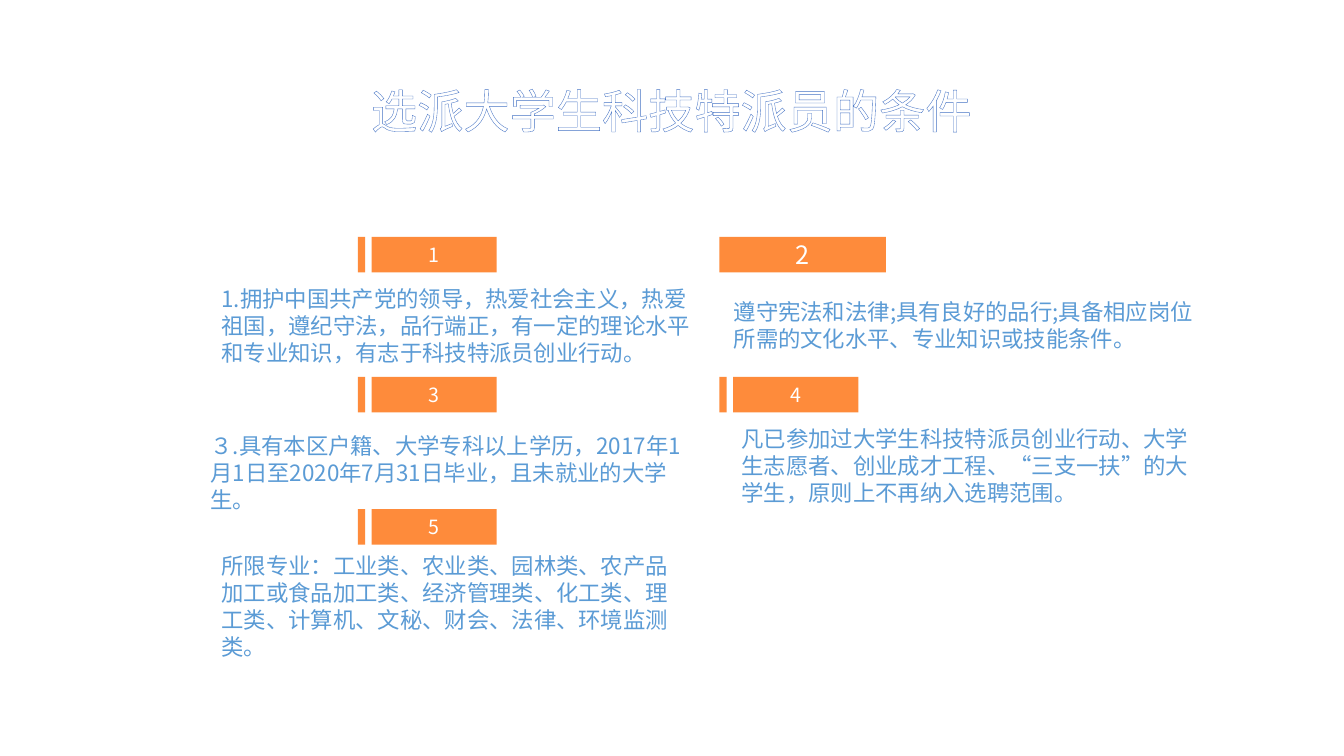
from lxml import etree
from pptx import Presentation
from pptx import util as u
from pptx.dml.color import RGBColor
from pptx.enum import shapes, text
from pptx.oxml import ns

COLORS = {"orange": "FE8B3B", "white": "FFFFFF", "blue": "5B9BD5", "outline": "4472C4"}
CJK_FONT = "Noto Sans CJK SC"
TITLE = "选派大学生科技特派员的条件"
TITLE_BOX = (169.2, 28.8, 620.64, 104.4)

COLUMNS = (255.6, 513.9)
ROWS = (169.2, 269.3, 363.6)
TAB_HEIGHT = 25.4
SLIVER_WIDTH, TAB_OFFSET, TAB_WIDTH = 5.2, 9.8, 89.4
WIDE_TAB_WIDTH = 119

# label, column, row, wide tab, text box (left, top, width, height), wording
CONDITIONS = [
    ("1", 0, 0, False, (151.2, 200.2, 355, 64.8),
     "1.拥护中国共产党的领导，热爱社会主义，热爱祖国，遵纪守法，品行端正，有一定的理论水平和专业知识，有志于科技特派员创业行动。"),
    ("2", 1, 0, True, (517, 209.5, 344.9, 45.4),
     "遵守宪法和法律;具有良好的品行;具备相应岗位所需的文化水平、专业知识或技能条件。"),
    ("3", 0, 1, False, (143.3, 305.3, 354.2, 45.4),
     "３.具有本区户籍、大学专科以上学历，2017年1月1日至2020年7月31日毕业，且未就业的大学生。"),
    ("4", 1, 1, False, (522.7, 300.2, 334.1, 64.8),
     "凡已参加过大学生科技特派员创业行动、大学生志愿者、创业成才工程、“三支一扶”的大学生，原则上不再纳入选聘范围。"),
    ("5", 0, 2, False, (151.2, 391, 346.3, 84.2),
     "所限专业：工业类、农业类、园林类、农产品加工或食品加工类、经济管理类、化工类、理工类、计算机、文秘、财会、法律、环境监测类。"),
]


def write(shape, wording, size, color, font=CJK_FONT):
    frame = shape.text_frame
    frame.text = wording
    frame.word_wrap = True
    run = frame.paragraphs[0].runs[0]
    run.font.size = u.Pt(size)
    run.font.color.rgb = RGBColor.from_string(COLORS[color])
    run.font.name = font
    east_asian = etree.Element(ns.qn("a:ea"), typeface=CJK_FONT)
    run.font._element.find(ns.qn("a:latin")).addnext(east_asian)
    return run


def center(shape):
    shape.text_frame.vertical_anchor = text.MSO_ANCHOR.MIDDLE
    shape.text_frame.paragraphs[0].alignment = text.PP_ALIGN.CENTER


def outline(run, color, width):
    """Give the run's letters an outline."""
    line = etree.Element(ns.qn("a:ln"), w=str(u.Pt(width)))
    fill = etree.SubElement(line, ns.qn("a:solidFill"))
    etree.SubElement(fill, ns.qn("a:srgbClr"), val=COLORS[color])
    run.font._element.insert(0, line)


def add_text_box(slide, box):
    return slide.shapes.add_textbox(*map(u.Pt, box))


def add_bar(slide, left, top, width):
    bar = slide.shapes.add_shape(
        shapes.MSO_SHAPE.RECTANGLE, *map(u.Pt, (left, top, width, TAB_HEIGHT)))
    bar.shadow.inherit = False
    bar.fill.solid()
    bar.fill.fore_color.rgb = RGBColor.from_string(COLORS["orange"])
    bar.line.fill.background()
    return bar


def add_tab(slide, label, left, top, wide):
    if wide:
        tab = add_bar(slide, left, top, WIDE_TAB_WIDTH)
    else:
        add_bar(slide, left, top, SLIVER_WIDTH)
        tab = add_bar(slide, left + TAB_OFFSET, top, TAB_WIDTH)
        frame = tab.text_frame
        frame.margin_left = frame.margin_right = 0
        frame.margin_top = frame.margin_bottom = 0
    write(tab, label, 18 if wide else 14, "white")
    center(tab)


def main():
    presentation = Presentation()
    presentation.slide_width = u.Pt(960)
    presentation.slide_height = u.Pt(540)
    slide = presentation.slides.add_slide(presentation.slide_layouts[6])

    title = add_text_box(slide, TITLE_BOX)
    outline(write(title, TITLE, 33, "white", "Calibri"), "outline", 0.8)
    center(title)
    title.text_frame.paragraphs[0].line_spacing = 0.9

    for label, column, row, wide, box, wording in CONDITIONS:
        add_tab(slide, label, COLUMNS[column], ROWS[row], wide)
        write(add_text_box(slide, box), wording, 16, "blue")

    presentation.save("out.pptx")


if __name__ == "__main__":
    main()
